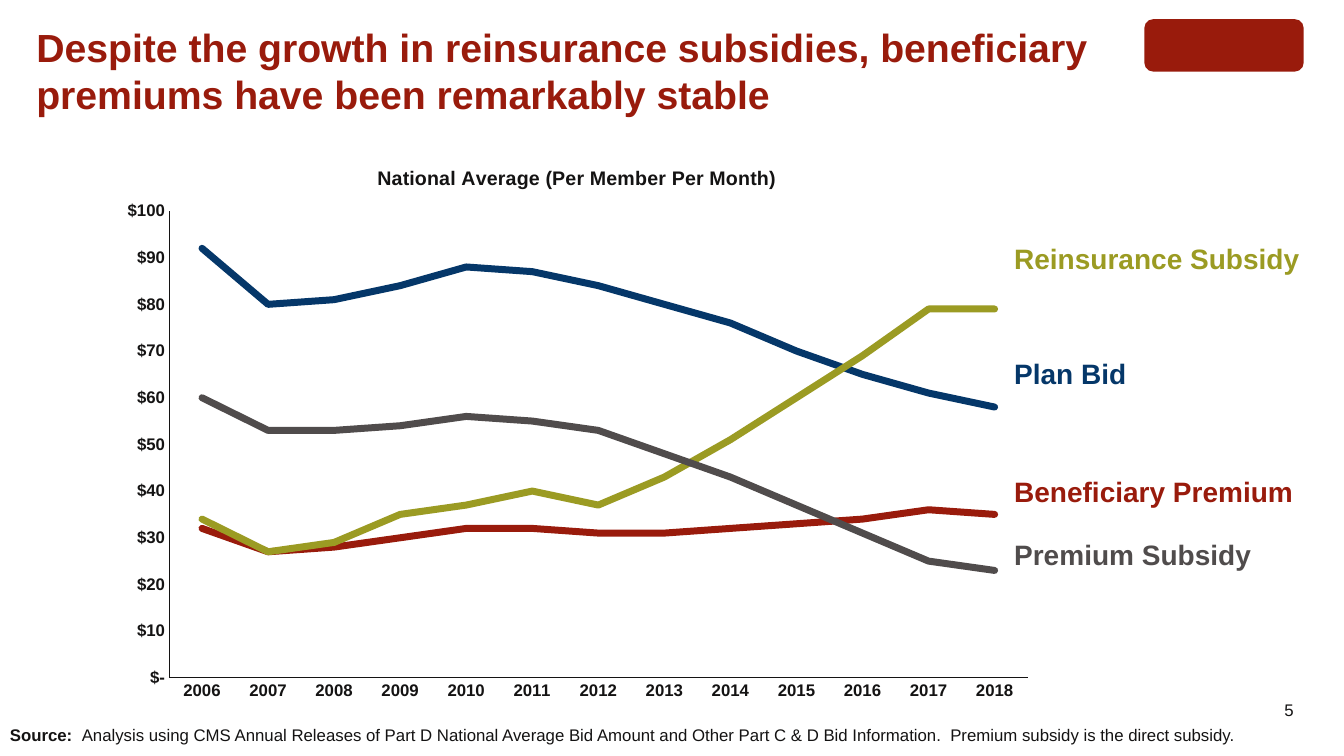
import pptx
import pptx.chart.data
import pptx.dml.color
import pptx.enum.chart
import pptx.enum.shapes
import pptx.enum.text
import pptx.oxml
import pptx.oxml.ns
import pptx.util

WIDTH, HEIGHT = 13.33, 7.5

THEME = {
    "font": "Arial",
    "ink": "141313", "red": "991B0C", "navy": "053769",
    "olive": "9B9B23", "gray": "504C4C",
    "heading": 28, "label": 20, "chart_title": 14, "small": 12,
}

HEADING = ("Despite the growth in reinsurance subsidies, beneficiary "
           "premiums have been remarkably stable")
CHART_TITLE = "National Average (Per Member Per Month)"
YEARS = [str(year) for year in range(2006, 2019)]
# Name, colour, top of its label, dollars per year
SERIES = [
    ("Plan Bid", "navy", 3.49, [92, 80, 81, 84, 88, 87, 84, 80, 76, 70, 65, 61, 58]),
    ("Beneficiary Premium", "red", 4.66, [32, 27, 28, 30, 32, 32, 31, 31, 32, 33, 34, 36, 35]),
    ("Reinsurance Subsidy", "olive", 2.35, [34, 27, 29, 35, 37, 40, 37, 43, 51, 60, 69, 79, 79]),
    ("Premium Subsidy", "gray", 5.28, [60, 53, 53, 54, 56, 55, 53, 48, 43, 37, 31, 25, 23]),
]
SOURCE = [
    ("Source:  ", True),
    ("Analysis using CMS Annual Releases of Part D National Average Bid Amount and "
     "Other Part C & D Bid Information.  Premium subsidy is the direct subsidy.", False),
]
PAGE_NUMBER = "5"

# Left, top, width, height in inches
HEADING_BOX = (0.26, 0.18, 10.75, 1.05)
BADGE_BOX = (11.35, 0.19, 1.58, 0.52)
CHART_BOX = (0.99, 1.39, 9.4, 5.67)
SOURCE_BOX = (0, 7.14, 12.43, 0.28)
NUMBER_BOX = (12.06, 6.94, 0.77, 0.2)
LABEL_LEFT, LABEL_WIDTH, LABEL_HEIGHT = 9.96, 3.25, 0.44

# Shares of the chart's size
PLOT_LAYOUT = {"layoutTarget": "inner", "xMode": "edge", "yMode": "edge",
               "x": 0.073, "y": 0.124, "w": 0.906, "h": 0.817}
TITLE_LAYOUT = {"xMode": "edge", "yMode": "edge", "x": 0.289, "y": 0.038}


def inches(box):
    return [pptx.util.Inches(length) for length in box]


def color(name):
    return pptx.dml.color.RGBColor.from_string(THEME[name])


def format_font(font, size, color_name="ink", bold=False):
    formats = {"name": THEME["font"], "size": pptx.util.Pt(THEME[size]), "bold": bold}
    for attribute, value in formats.items():
        setattr(font, attribute, value)
    font.color.rgb = color(color_name)


def add_text(slide, box, runs, size, color_name="ink", **frame_formats):
    """Add one paragraph made of (text, bold) runs."""
    frame = slide.shapes.add_textbox(*inches(box)).text_frame
    for attribute, value in {"word_wrap": True, **frame_formats}.items():
        setattr(frame, attribute, value)
    paragraph = frame.paragraphs[0]
    for text, bold in runs:
        run = paragraph.add_run()
        run.text = text
        format_font(run.font, size, color_name, bold)
    return paragraph


def set_layout(parent, position, values):
    for layout in parent.findall(pptx.oxml.ns.qn("c:layout")):
        parent.remove(layout)
    settings = "".join(f'<c:{key} val="{value}"/>' for key, value in values.items())
    parent.insert(position, pptx.oxml.parse_xml(
        f'<c:layout {pptx.oxml.ns.nsdecls("c")}>'
        f'<c:manualLayout>{settings}</c:manualLayout></c:layout>'))


def add_heading(slide):
    title = slide.shapes.title
    title.left, title.top, title.width, title.height = inches(HEADING_BOX)
    frame = title.text_frame
    frame.text = HEADING
    frame.word_wrap = True
    frame.auto_size = pptx.enum.text.MSO_AUTO_SIZE.NONE
    frame.vertical_anchor = pptx.enum.text.MSO_ANCHOR.TOP
    paragraph = frame.paragraphs[0]
    paragraph.alignment = pptx.enum.text.PP_ALIGN.LEFT
    paragraph.line_spacing = 1.0
    format_font(paragraph.runs[0].font, "heading", "red", True)


def add_badge(slide):
    badge = slide.shapes.add_shape(
        pptx.enum.shapes.MSO_SHAPE.ROUNDED_RECTANGLE, *inches(BADGE_BOX))
    badge.shadow.inherit = False
    badge.fill.solid()
    badge.fill.fore_color.rgb = color("red")
    badge.line.fill.background()


def add_premium_chart(slide):
    data = pptx.chart.data.CategoryChartData()
    data.categories = YEARS
    for name, _, _, values in SERIES:
        data.add_series(name, values)
    chart = slide.shapes.add_chart(
        pptx.enum.chart.XL_CHART_TYPE.LINE, *inches(CHART_BOX), data).chart
    chart.has_legend = False
    format_font(chart.font, "small")

    chart.has_title = True
    title_frame = chart.chart_title.text_frame
    title_frame.text = CHART_TITLE
    format_font(title_frame.paragraphs[0].runs[0].font, "chart_title", bold=True)
    chart.chart_title.include_in_layout = True
    set_layout(chart.element.xpath("c:chart/c:title")[0], 1, TITLE_LAYOUT)
    set_layout(chart.element.xpath("c:chart/c:plotArea")[0], 0, PLOT_LAYOUT)

    for axis in (chart.category_axis, chart.value_axis):
        axis.has_major_gridlines = False
        axis.major_tick_mark = axis.minor_tick_mark = pptx.enum.chart.XL_TICK_MARK.NONE
        axis.format.line.width = pptx.util.Pt(0.75)
        axis.format.line.color.rgb = color("ink")
        format_font(axis.tick_labels.font, "small", bold=True)
    scale = {"minimum_scale": 0, "maximum_scale": 100, "major_unit": 10}
    for attribute, value in scale.items():
        setattr(chart.value_axis, attribute, value)
    dollar_labels = chart.value_axis.tick_labels
    dollar_labels.number_format = '"$"#,##0;-"$"#,##0;"$-"'
    dollar_labels.number_format_is_linked = False

    plot = chart.plots[0]
    plot.vary_by_categories = False
    for series, (_, color_name, _, _) in zip(plot.series, SERIES):
        series.smooth = False
        series.marker.style = pptx.enum.chart.XL_MARKER_STYLE.NONE
        series.format.line.width = pptx.util.Pt(5)
        series.format.line.color.rgb = color(color_name)
    for line in chart.element.xpath(".//c:ser/c:spPr/a:ln"):
        line.set("cap", "rnd")
        line.append(pptx.oxml.parse_xml(f'<a:round {pptx.oxml.ns.nsdecls("a")}/>'))


def main():
    presentation = pptx.Presentation()
    presentation.slide_width, presentation.slide_height = inches((WIDTH, HEIGHT))
    slide = presentation.slides.add_slide(
        presentation.slide_layouts.get_by_name("Title Only"))
    add_heading(slide)
    add_badge(slide)
    add_premium_chart(slide)
    for name, color_name, top, _ in SERIES:
        add_text(slide, (LABEL_LEFT, top, LABEL_WIDTH, LABEL_HEIGHT),
                 [(name, True)], "label", color_name)
    add_text(slide, SOURCE_BOX, SOURCE, "small")
    number = add_text(slide, NUMBER_BOX, [(PAGE_NUMBER, False)], "small",
                      margin_left=0, margin_right=0, margin_top=0, margin_bottom=0)
    number.alignment = pptx.enum.text.PP_ALIGN.RIGHT
    presentation.save("out.pptx")


if __name__ == "__main__":
    main()
